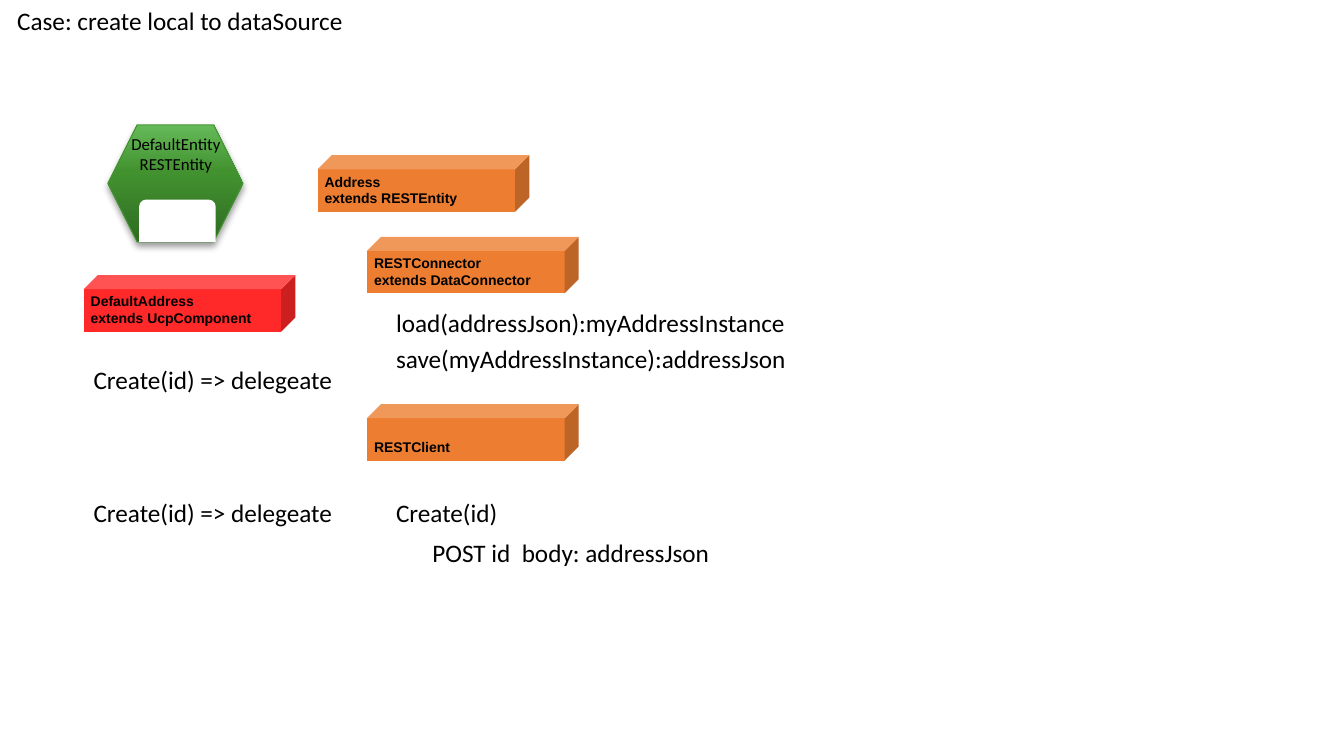
from copy import deepcopy
from dataclasses import dataclass

from lxml.etree import SubElement
from pptx import Presentation
from pptx.dml.color import RGBColor
from pptx.enum.shapes import MSO_SHAPE as Shape
from pptx.enum.text import MSO_ANCHOR as Anchor, PP_ALIGN as Align
from pptx.oxml.ns import qn
from pptx.util import Inches, Pt


@dataclass(frozen=True)
class Theme:
    text: str = "000000"
    paper: str = "FFFFFF"
    orange: str = "ED7D31"
    red: str = "FF2929"
    green_line: str = "439631"
    green_stops: tuple = ((0, "2F6B22"), (0.6, "429230"), (1, "66B959"))
    body_font: str = "Calibri"
    class_font: str = "Arial"
    body_size: int = 18
    entity_size: int = 12
    class_size: int = 10


THEME = Theme()

TITLE = ("Case: create local to dataSource", (0.07, 0, 3.47, 0.4))
ENTITY_NAMES = ("DefaultEntity\nRESTEntity", (1.2, 1.28, 1.09, 0.5))
ENTITY_BOX = (1.07, 1.24, 1.34, 1.16)
ENTITY_DOOR = (1.38, 1.98, 0.76, 0.42)

CLASS_SIZE = (2.1, 0.56)
CLASSES = [  # label, left, top, colour
    ("Address\vextends RESTEntity", 3.15, 1.54, THEME.orange),
    ("DefaultAddress\vextends UcpComponent", 0.83, 2.73, THEME.red),
    ("RESTClient", 3.64, 4.01, THEME.orange),
    ("RESTConnector\vextends DataConnector", 3.64, 2.35, THEME.orange),
]

CALL_HEIGHT = 0.4
CALLS = [  # text, left, top, width
    ("Create(id) => delegeate", 0.83, 3.57, 2.6),
    ("Create(id) => delegeate", 0.83, 4.88, 2.6),
    ("load(addressJson):myAddressInstance", 3.83, 3, 4.16),
    ("save(myAddressInstance):addressJson", 3.83, 3.36, 4.11),
    ("Create(id)", 3.83, 4.88, 1.22),
    ("POST id  body: addressJson", 4.19, 5.28, 2.98),
]


def inches(box):
    return [Inches(length) for length in box]


def write(shape, text, *, size=THEME.body_size, font=THEME.body_font, bold=False,
          align=Align.LEFT, anchor=Anchor.TOP, insets=(0.1, 0.05, 0.1, 0.05), wrap=False):
    frame = shape.text_frame
    frame.word_wrap = wrap
    frame.vertical_anchor = anchor
    (frame.margin_left, frame.margin_top,
     frame.margin_right, frame.margin_bottom) = inches(insets)
    frame.text = text
    for paragraph in frame.paragraphs:
        paragraph.alignment = align
        paragraph.line_spacing = 1.0
        paragraph.space_before = Pt(0)
        for run in paragraph.runs:
            run.font.name, run.font.size, run.font.bold = font, Pt(size), bold
            run.font.color.rgb = RGBColor.from_string(THEME.text)


def add_plain_shape(shapes, kind, box, color):
    shape = shapes.add_shape(kind, *inches(box))
    shape.shadow.inherit = False
    shape.fill.solid()
    shape.fill.fore_color.rgb = RGBColor.from_string(color)
    shape.line.fill.background()
    return shape


def fill_gradient(shape, stops):
    """Fill upwards from the first stop to the last."""
    shape.fill.gradient()
    shape.fill.gradient_angle = 90
    stop_list = shape.element.spPr.find(qn("a:gradFill")).find(qn("a:gsLst"))
    stop_list.insert(1, deepcopy(stop_list[0]))
    for stop, (position, color) in zip(shape.fill.gradient_stops, stops):
        stop.position = position
        stop.color.rgb = RGBColor.from_string(color)


def add_shadow(shape):
    effects = shape.element.spPr.find(qn("a:effectLst"))
    shadow = SubElement(effects, qn("a:outerShdw"), blurRad=str(Pt(5.2)),
                        dist=str(Pt(3)), dir="5400000", rotWithShape="0")
    color = SubElement(shadow, qn("a:srgbClr"), val=THEME.text)
    SubElement(color, qn("a:alpha"), val="40000")


def add_entity(slide):
    group = slide.shapes.add_group_shape()
    hexagon = add_plain_shape(group.shapes, Shape.HEXAGON, ENTITY_BOX, THEME.paper)
    fill_gradient(hexagon, THEME.green_stops)
    hexagon.line.color.rgb = RGBColor.from_string(THEME.green_line)
    hexagon.line.width = Pt(0.75)
    add_shadow(hexagon)
    add_plain_shape(group.shapes, Shape.ROUND_2_SAME_RECTANGLE, ENTITY_DOOR, THEME.paper)
    names, box = ENTITY_NAMES
    write(slide.shapes.add_textbox(*inches(box)), names,
          size=THEME.entity_size, align=Align.CENTER)


def main():
    presentation = Presentation()
    presentation.slide_width, presentation.slide_height = inches((13.33, 7.5))
    slide = presentation.slides.add_slide(presentation.slide_layouts[5])

    title = slide.shapes.title
    text, box = TITLE
    title.left, title.top, title.width, title.height = inches(box)
    write(title, text)

    add_entity(slide)
    for label, left, top, color in CLASSES:
        cube = add_plain_shape(slide.shapes, Shape.CUBE, (left, top, *CLASS_SIZE), color)
        write(cube, label, size=THEME.class_size, font=THEME.class_font, bold=True,
              anchor=Anchor.BOTTOM, insets=(0.07, 0.03, 0.07, 0.05), wrap=True)
    for text, left, top, width in CALLS:
        write(slide.shapes.add_textbox(*inches((left, top, width, CALL_HEIGHT))), text)

    presentation.save("out.pptx")


if __name__ == "__main__":
    main()
